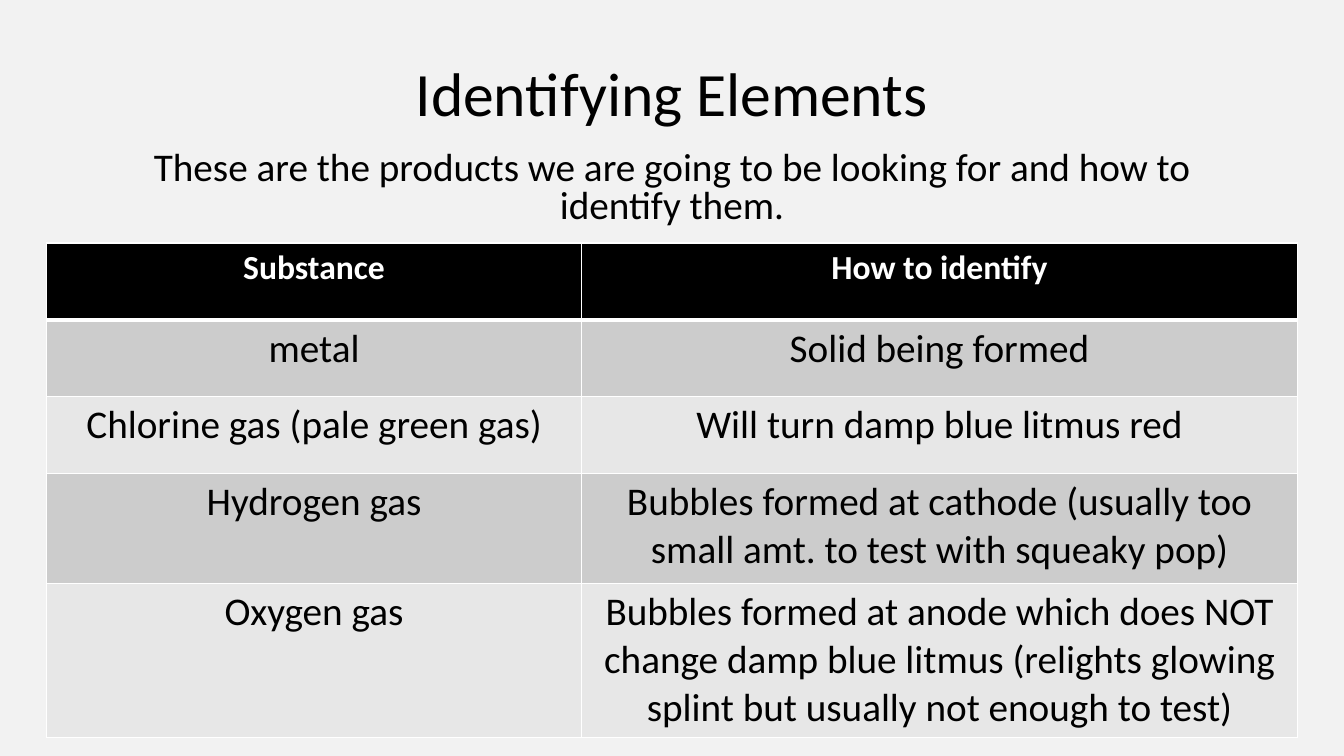
import dataclasses

import lxml.etree
import pptx
import pptx.dml.color
import pptx.enum.text
import pptx.oxml.ns
import pptx.util

Pt = pptx.util.Pt
qn = pptx.oxml.ns.qn


@dataclasses.dataclass(frozen=True)
class Theme:
    font: str = "Calibri"
    background: str = "F2F2F2"
    text: str = "000000"
    header_fill: str = "000000"
    header_text: str = "FFFFFF"
    border: str = "FFFFFF"
    bands: tuple = ("CCCCCC", "E7E7E7")
    title_size: int = 44
    body_size: int = 28
    header_size: int = 24
    thin_border: int = 1
    thick_border: int = 3


def rgb(code):
    return pptx.dml.color.RGBColor.from_string(code)


class SlideBuilder:
    def __init__(self, presentation, theme):
        self.theme = theme
        self.slide = presentation.slides.add_slide(presentation.slide_layouts[1])
        background = self.slide.background.fill
        background.solid()
        background.fore_color.rgb = rgb(theme.background)

    def style_paragraph(self, paragraph, size, color, bold=False):
        paragraph.alignment = pptx.enum.text.PP_ALIGN.CENTER
        paragraph.font.name = self.theme.font
        paragraph.font.size = Pt(size)
        paragraph.font.bold = bold
        paragraph.font.color.rgb = rgb(color)

    def fill_placeholder(self, shape, text, box, size, anchor, line_spacing):
        shape.left, shape.top, shape.width, shape.height = map(Pt, box)
        frame = shape.text_frame
        frame.text = text
        frame.word_wrap = True
        frame.auto_size = pptx.enum.text.MSO_AUTO_SIZE.NONE
        frame.vertical_anchor = anchor
        paragraph = frame.paragraphs[0]
        self.style_paragraph(paragraph, size, self.theme.text)
        paragraph.line_spacing = line_spacing
        return paragraph

    def title(self, text, box):
        self.fill_placeholder(self.slide.shapes.title, text, box, self.theme.title_size,
                              pptx.enum.text.MSO_ANCHOR.MIDDLE, 0.9)

    def body(self, text, box):
        paragraph = self.fill_placeholder(self.slide.placeholders[1], text, box,
                                          self.theme.body_size,
                                          pptx.enum.text.MSO_ANCHOR.TOP, 0.8)
        paragraph.space_before = Pt(10)
        properties = paragraph._p.get_or_add_pPr()
        properties.set("marL", "0")
        properties.set("indent", "0")
        lxml.etree.SubElement(properties, qn("a:buNone"))

    def cell_borders(self, cell, widths):
        """Draw the left, right, top and bottom borders, in that order."""
        properties = cell._tc.get_or_add_tcPr()
        for index, (side, width) in enumerate(zip("LRTB", widths)):
            line = lxml.etree.Element(qn(f"a:ln{side}"), w=str(Pt(width)))
            fill = lxml.etree.SubElement(line, qn("a:solidFill"))
            lxml.etree.SubElement(fill, qn("a:srgbClr"), val=self.theme.border)
            properties.insert(index, line)

    def table(self, rows, left, top, column_widths, row_heights):
        theme = self.theme
        table = self.slide.shapes.add_table(
            len(rows), len(column_widths), Pt(left), Pt(top),
            Pt(sum(column_widths)), Pt(sum(row_heights))).table
        table.horz_banding = False
        for column, width in zip(table.columns, column_widths):
            column.width = Pt(width)
        for row, height in zip(table.rows, row_heights):
            row.height = Pt(height)
        thin, thick = theme.thin_border, theme.thick_border
        for row_index, texts in enumerate(rows):
            header = row_index == 0
            fill = theme.header_fill if header else theme.bands[(row_index - 1) % 2]
            size = theme.header_size if header else theme.body_size
            color = theme.header_text if header else theme.text
            borders = (thin, thin, thick if row_index == 1 else thin,
                       thick if header else thin)
            for column_index, text in enumerate(texts):
                cell = table.cell(row_index, column_index)
                cell.text = text
                cell.fill.solid()
                cell.fill.fore_color.rgb = rgb(fill)
                self.style_paragraph(cell.text_frame.paragraphs[0], size, color, header)
                self.cell_borders(cell, borders)


def main():
    presentation = pptx.Presentation()
    presentation.slide_width = Pt(960)
    presentation.slide_height = Pt(540)
    builder = SlideBuilder(presentation, Theme())
    builder.title("Identifying Elements", (66, 16.5, 828, 104.5))
    builder.body("These are the products we are going to be looking for and how to "
                 "identify them.", (66, 104.5, 828, 66))
    builder.table(
        [
            ("Substance", "How to identify"),
            ("metal", "Solid being formed"),
            ("Chlorine gas (pale green gas)", "Will turn damp blue litmus red"),
            ("Hydrogen gas",
             "Bubbles formed at cathode (usually too small amt. to test with squeaky pop)"),
            ("Oxygen gas",
             "Bubbles formed at anode which does NOT change damp blue litmus "
             "(relights glowing splint but usually not enough to test)"),
        ],
        left=33.3, top=173.5, column_widths=(382, 511.5),
        row_heights=(54.9, 54.9, 54.9, 78.5, 110))
    presentation.save("out.pptx")


if __name__ == "__main__":
    main()
